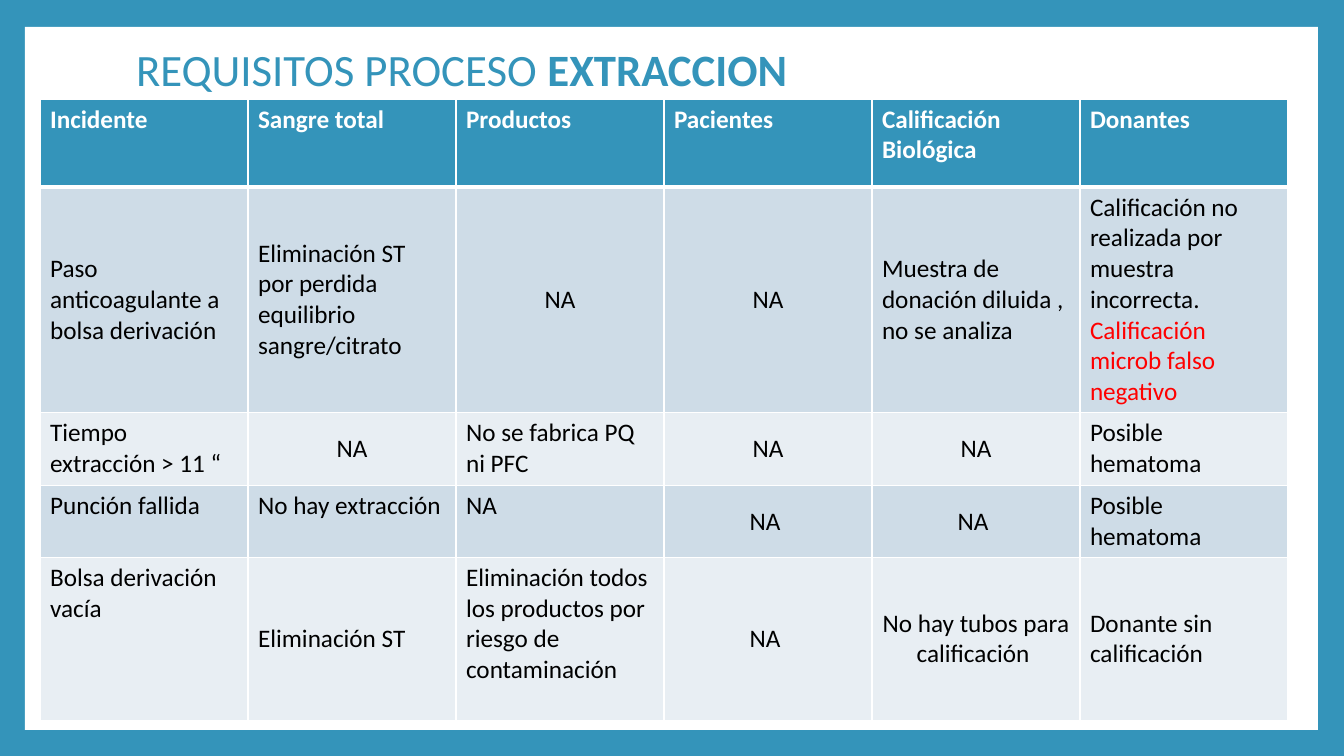
from pptx import Presentation
from pptx import util as u
from pptx.dml.color import RGBColor
from pptx.enum import shapes, text
from pptx.oxml import parse_xml
from pptx.oxml.ns import nsdecls

PX = 914400 / 100.8
INK = {"blue": "3494BA", "white": "FFFFFF", "black": "000000",
       "red": "FF0000", "dark": "CEDCE7", "light": "E8EEF3"}
COLS = [208] * 6
ROWS = [88, 225, 73, 72, 163]
HEADS = ["Incidente", "Sangre total", "Productos", "Pacientes",
         "Calificación Biológica", "Donantes"]
CASES = [
    [("m", "Paso anticoagulante a bolsa derivación"),
     ("m", "Eliminación ST por perdida equilibrio sangre/citrato"),
     ("c", "NA"), ("c", "NA"),
     ("m", "Muestra de donación diluida , no se analiza"),
     ("t", "Calificación no realizada por muestra incorrecta.",
      "Calificación microb falso negativo")],
    [("t", "Tiempo extracción > 11 “"), ("c", "NA"),
     ("t", "No se fabrica PQ ni PFC"), ("c", "NA"), ("c", "NA"),
     ("t", "Posible hematoma")],
    [("t", "Punción fallida"), ("t", "No hay extracción"), ("t", "NA"),
     ("c", "NA "), ("c", "NA "), ("t", "Posible hematoma")],
    [("t", "Bolsa derivación vacía"), ("m", "Eliminación ST"),
     ("t", "Eliminación todos los productos por riesgo de contaminación"),
     ("c", "NA "), ("c", "No hay tubos para calificación "),
     ("m", "Donante sin calificación")],
]


def px(n):
    """Turn px into EMU."""
    return u.Emu(round(n * PX))


def paint(fill, name):
    """Set a solid fill from the palette."""
    fill.solid()
    fill.fore_color.rgb = RGBColor.from_string(INK[name])


def write(para, words, size, color, bold=False):
    """Add one styled run to a paragraph."""
    run = para.add_run()
    run.text = words
    font = run.font
    font.name, font.size, font.bold = "Calibri", u.Pt(size), bold
    font.color.rgb = RGBColor.from_string(INK[color])


def frame(slide, box):
    """Set the blue ground and the white panel behind everything."""
    paint(slide.background.fill, "blue")
    panel = slide.shapes.add_shape(shapes.MSO_SHAPE.RECTANGLE, *map(px, box))
    panel.shadow.inherit = False
    paint(panel.fill, "white")
    panel.line.fill.background()
    slide.shapes._spTree.insert(2, panel._element)


def head(slide, box):
    """Place and fill the title."""
    title = slide.shapes.title
    title.left, title.top, title.width, title.height = map(px, box)
    body = title.text_frame
    body.auto_size = text.MSO_AUTO_SIZE.NONE
    body.vertical_anchor = text.MSO_ANCHOR.MIDDLE
    para = body.paragraphs[0]
    para.alignment = text.PP_ALIGN.LEFT
    para.line_spacing = 0.9
    write(para, "REQUISITOS PROCESO ", 32, "blue")
    write(para, "EXTRACCION", 32, "blue", True)


def edge(cell, top, base):
    """Draw white borders round a cell."""
    props = cell._tc.get_or_add_tcPr()
    widths = {"lnL": 1, "lnR": 1, "lnT": top, "lnB": base}
    for spot, (side, wide) in enumerate(widths.items()):
        props.insert(spot, parse_xml(
            f'<a:{side} {nsdecls("a")} w="{u.Pt(wide)}"><a:solidFill>'
            f'<a:srgbClr val="{INK["white"]}"/></a:solidFill></a:{side}>'))


def fill(cell, mode, parts, inks, bold):
    """Write the paragraphs of a cell; mode is t, m or c."""
    anchor = text.MSO_ANCHOR
    cell.vertical_anchor = anchor.TOP if mode == "t" else anchor.MIDDLE
    body = cell.text_frame
    for n, (words, ink) in enumerate(zip(parts, inks)):
        para = body.add_paragraph() if n else body.paragraphs[0]
        align = text.PP_ALIGN
        para.alignment = align.CENTER if mode == "c" else align.LEFT
        write(para, words, 18, ink, bold)


def grid(slide, left, top):
    """Build the table of incidents."""
    table = slide.shapes.add_table(
        len(ROWS), len(COLS), px(left), px(top),
        px(sum(COLS)), px(sum(ROWS))).table
    for col, wide in zip(table.columns, COLS):
        col.width = px(wide)
    lines = [[("t", name) for name in HEADS]] + CASES
    for r, (row, high) in enumerate(zip(table.rows, ROWS)):
        row.height = px(high)
        shade = "blue" if r == 0 else "dark" if r % 2 else "light"
        inks = ["white"] if r == 0 else ["black", "red"]
        for cell, (mode, *parts) in zip(row.cells, lines[r]):
            paint(cell.fill, shade)
            edge(cell, 3 if r == 1 else 1, 3 if r == 0 else 1)
            fill(cell, mode, parts, inks, r == 0)


def main():
    """Build and save the slide."""
    deck = Presentation()
    deck.slide_width, deck.slide_height = px(1344), px(756)
    slide = deck.slides.add_slide(deck.slide_layouts[5])
    frame(slide, (25, 27, 1293, 703))
    head(slide, (126, 36, 1089, 72))
    grid(slide, 40, 99)
    deck.save("out.pptx")


if __name__ == "__main__":
    main()
